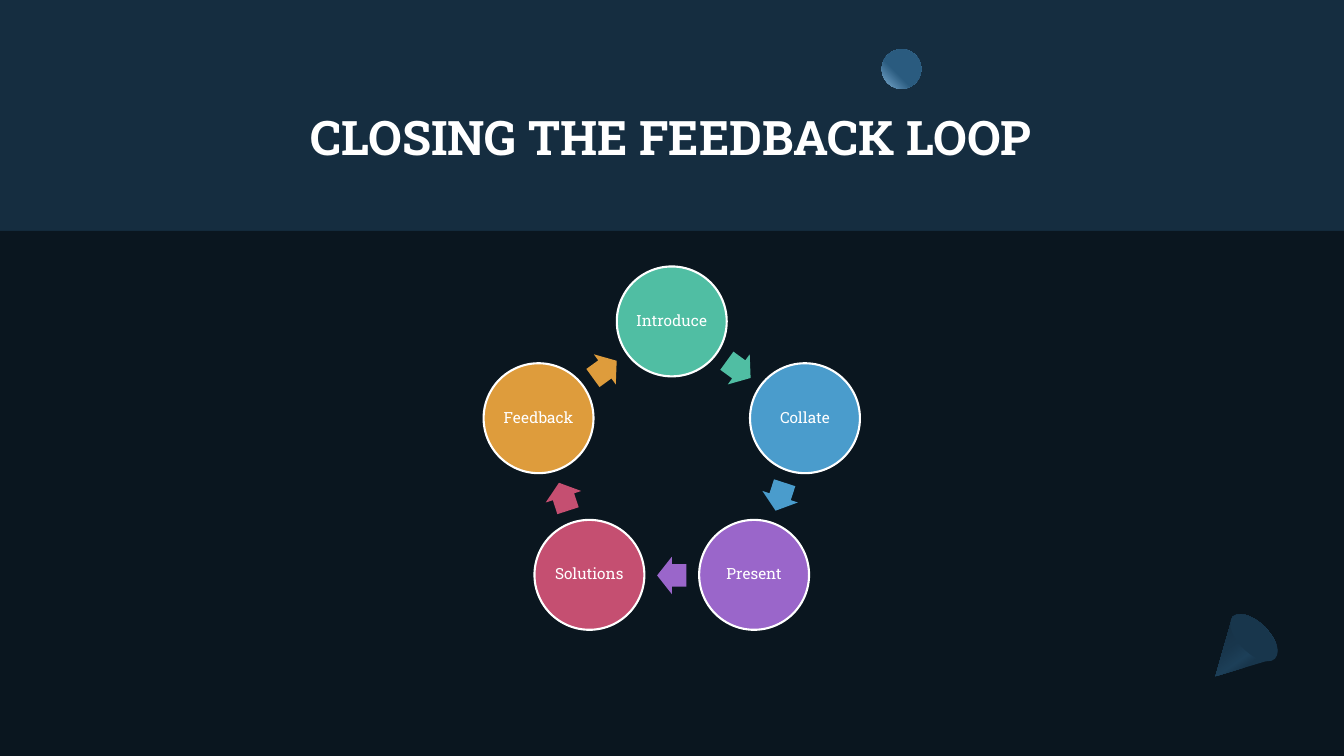
from dataclasses import dataclass
from math import cos, radians, sin

from lxml.etree import SubElement
from pptx import Presentation
from pptx.dml.color import RGBColor
from pptx.enum.shapes import MSO_SHAPE as Kind
from pptx.enum.text import MSO_ANCHOR as Anchor, PP_ALIGN as Align
from pptx.oxml import parse_xml
from pptx.oxml.ns import nsdecls, qn
from pptx.util import Cm, Pt

FONT = "Roboto Slab"
WHITE = "FFFFFF"
WIDE, HIGH = 33.87, 19.05

# Ring layout, in cm
MID_X, MID_Y = 16.93, 11.63
RING, DISC = 3.53, 2.77
TRACK, LONG, BROAD = 2.87, 0.74, 0.94


@dataclass
class Step:
    label: str
    hue: str


STEPS = [
    Step("Introduce", "50BEA3"),
    Step("Collate", "4A9CCC"),
    Step("Present", "9A66CA"),
    Step("Solutions", "C54F71"),
    Step("Feedback", "DE9C3C"),
]


def paint(fill, hue: str) -> None:
    fill.solid()
    fill.fore_color.rgb = RGBColor.from_string(hue)


def add(kind, left: float, top: float, width: float, height: float, hue: str):
    shape = slide.shapes.add_shape(kind, Cm(left), Cm(top), Cm(width), Cm(height))
    shape.shadow.inherit = False
    paint(shape.fill, hue)
    shape.line.fill.background()
    return shape


def center(kind, x: float, y: float, width: float, height: float, hue: str):
    return add(kind, x - width / 2, y - height / 2, width, height, hue)


def blend(shape, stops: list[tuple[int, str]], way: str) -> None:
    """Swap the solid fill for a gradient; way is the direction element."""
    marks = "".join(
        f'<a:gs pos="{pos * 1000}"><a:srgbClr val="{hue}"/></a:gs>' for pos, hue in stops
    )
    grad = parse_xml(
        f'<a:gradFill {nsdecls("a")} rotWithShape="1"><a:gsLst>{marks}</a:gsLst>{way}</a:gradFill>'
    )
    props = shape.element.spPr
    props.replace(props.find(qn("a:solidFill")), grad)


def write(shape, text: str, size: int, inset: float, bold: bool = False) -> None:
    frame = shape.text_frame
    frame.word_wrap = True
    frame.vertical_anchor = Anchor.MIDDLE
    frame.margin_left = frame.margin_right = Cm(inset)
    frame.margin_top = frame.margin_bottom = Cm(inset)
    para = frame.paragraphs[0]
    para.alignment = Align.CENTER
    para.line_spacing = 0.9
    run = para.add_run()
    run.text = text
    run.font.name, run.font.size, run.font.bold = FONT, Pt(size), bold
    run.font.color.rgb = RGBColor.from_string(WHITE)


def curve(a, b, c, d, count: int = 12) -> list[tuple[float, float]]:
    """Points along a cubic curve from a to d, without a itself."""
    spots = []
    for i in range(1, count + 1):
        t = i / count
        u = 1 - t
        spots.append(tuple(
            u**3 * p + 3 * u * u * t * q + 3 * u * t * t * r + t**3 * s
            for p, q, r, s in zip(a, b, c, d)
        ))
    return spots


def polar(turn: float, reach: float) -> tuple[float, float]:
    """Point on the ring, turned clockwise from the top."""
    return MID_X + reach * sin(radians(turn)), MID_Y - reach * cos(radians(turn))


deck = Presentation()
deck.slide_width, deck.slide_height = Cm(WIDE), Cm(HIGH)
slide = deck.slides.add_slide(deck.slide_layouts[6])
paint(slide.background.fill, "152D40")

# Ball near the title
ball = add(Kind.OVAL, 22.22, 1.24, 1.0, 1.0, "2A5B7F")
blend(ball, [(0, "2A5B7F"), (60, "2A5B7F"), (100, "7FB0D5")],
      '<a:path path="circle"><a:fillToRect l="100000" b="100000"/></a:path>')

# Cone in the corner
tip, left, right = (30.63, 17.04), (31.06, 15.55), (32.08, 16.61)
side = curve(left, (31.22, 15.39), (31.57, 15.5), (31.88, 15.8))
side += curve(side[-1], (32.18, 16.13), (32.31, 16.46), right)
pen = slide.shapes.build_freeform(Cm(tip[0]), Cm(tip[1]))
pen.add_line_segments([(Cm(x), Cm(y)) for x, y in [left, *side]], close=True)
cone = pen.convert_to_shape()
cone.shadow.inherit = False
paint(cone.fill, "326D99")
cone.line.fill.background()
blend(cone, [(0, "326D99"), (30, "326D99"), (40, "3B80B2"), (60, "326D99"), (100, "2A5B7F")],
      f'<a:lin ang="{235 * 60000}" scaled="0"/>')
base = center(Kind.OVAL, 31.6, 16.07, 0.76, 1.5, "326D99")
base.rotation = 315

# Title
title = slide.shapes.add_textbox(Cm(2.54), Cm(1.7), Cm(28.75), Cm(3.68))
write(title, "CLOSING THE FEEDBACK LOOP", 34, 0.13, bold=True)

# Dark panel
panel = add(Kind.RECTANGLE, 0, 5.82, WIDE, HIGH - 5.82, "000000")
tone = panel.element.spPr.find(qn("a:solidFill"))[0]
SubElement(tone, qn("a:alpha"), val="50000")

# Ring of steps, each followed by an arrow
gap = 360 / len(STEPS)
for i, step in enumerate(STEPS):
    disc = center(Kind.OVAL, *polar(i * gap, RING), DISC, DISC, step.hue)
    paint(disc.line.fill, WHITE)
    disc.line.width = Pt(1.5)
    write(disc, step.label, 11, 0.04)

    turn = (i + 0.5) * gap
    arrow = center(Kind.RIGHT_ARROW, *polar(turn, TRACK), LONG, BROAD, step.hue)
    arrow.adjustments[0], arrow.adjustments[1] = 0.6, 0.5
    arrow.rotation = turn

deck.save("out.pptx")
